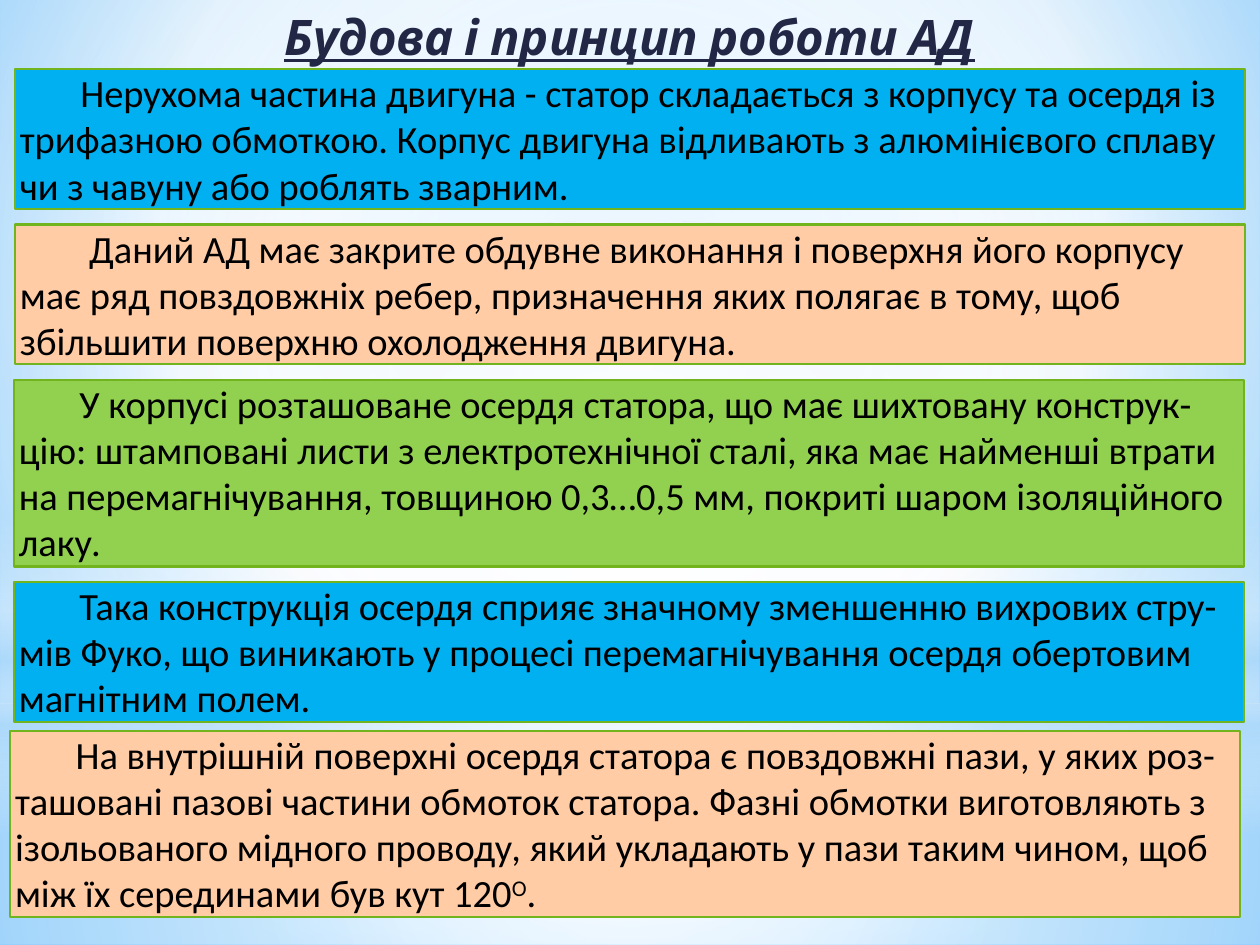
from dataclasses import dataclass

from lxml.etree import SubElement
from pptx import Presentation
from pptx.dml.color import RGBColor
from pptx.enum.shapes import MSO_SHAPE
from pptx.enum.text import MSO_ANCHOR, MSO_AUTO_SIZE, PP_ALIGN
from pptx.oxml.ns import qn
from pptx.util import Pt


@dataclass(frozen=True)
class Theme:
    title_font: str = "Cabin"
    body_font: str = "Calibri"
    title_size: int = 28
    body_size: int = 22
    title: str = "212745"
    body: str = "000000"
    border: str = "72B41D"
    blue: str = "00B0F0"
    peach: str = "FFCCA6"
    green: str = "92D050"
    white: str = "FFFFFF"
    haze: str = "B4DCFA"
    sky_centre: str = "9ED5FF"
    sky_edge: str = "5BB9FF"


THEME = Theme()
SLIDE_WIDTH, SLIDE_HEIGHT = 720, 540
PANEL_WIDTH, LINE_HEIGHT = 702.7, 26.65
FIRST_PANEL_TOP, PANEL_GAP, LAST_GAP = 39.6, 8.8, 5.15
CENTRE = (50, 50, 50, 50)


@dataclass(frozen=True)
class Panel:
    left: float
    lines: int
    fill: str
    indent: float
    text: str
    superscript: str = ""
    ending: str = ""
    gap: float = PANEL_GAP


PANELS = [
    Panel(8.6, 3, THEME.blue, 34.6,
          "Нерухома частина двигуна - статор складається з корпусу та осердя із "
          "трифазною обмоткою. Корпус двигуна відливають з алюмінієвого сплаву "
          "чи з чавуну або роблять зварним."),
    Panel(8.6, 3, THEME.peach, 39.6,
          "Даний АД має закрите обдувне виконання і поверхня його корпусу "
          "має ряд повздовжніх ребер, призначення яких полягає в тому, щоб "
          "збільшити поверхню охолодження двигуна."),
    Panel(8, 4, THEME.green, 34.6,
          "У корпусі розташоване осердя статора, що має шихтовану конструк-"
          "цію: штамповані листи з електротехнічної сталі, яка має найменші втрати "
          "на перемагнічування, товщиною 0,3…0,5 мм, покриті шаром ізоляційного "
          "лаку."),
    Panel(8, 3, THEME.blue, 34.6,
          "Така конструкція осердя сприяє значному зменшенню вихрових стру-"
          "мів Фуко, що виникають у процесі перемагнічування осердя обертовим "
          "магнітним полем.", gap=LAST_GAP),
    Panel(5.8, 4, THEME.peach, 34.6,
          "На внутрішній поверхні осердя статора є повздовжні пази, у яких роз-"
          "ташовані пазові частини обмоток статора. Фазні обмотки виготовляють з "
          "ізольованого мідного проводу, який укладають у пази таким чином, щоб "
          "між їх серединами був кут 120", "О", "."),
]


def set_gradient(owner, stops, focus=None):
    owner.fill.solid() if hasattr(owner, "fill") else owner.background.fill.solid()
    gradient = owner.element.find(".//" + qn("a:solidFill"))
    gradient.clear()
    gradient.tag = qn("a:gradFill")
    gradient.set("rotWithShape", "1")
    stop_list = SubElement(gradient, qn("a:gsLst"))
    for position, color, opacity in stops:
        stop = SubElement(stop_list, qn("a:gs"), pos=str(position * 1000))
        tint = SubElement(stop, qn("a:srgbClr"), val=color)
        if opacity < 100:
            SubElement(tint, qn("a:alpha"), val=str(opacity * 1000))
    if focus:
        circle = SubElement(gradient, qn("a:path"), path="circle")
        edges = {side: str(share * 1000) for side, share in zip("ltrb", focus)}
        SubElement(circle, qn("a:fillToRect"), edges)
    else:
        SubElement(gradient, qn("a:lin"), ang="5400000", scaled="0")


def add_glow(slide, top, height, stops, focus=CENTRE, outline=MSO_SHAPE.RECTANGLE):
    glow = slide.shapes.add_shape(outline, 0, Pt(top), Pt(SLIDE_WIDTH), Pt(height))
    glow.shadow.inherit = False
    glow.line.fill.background()
    set_gradient(glow, stops, focus)


def add_backdrop(slide):
    white, haze = THEME.white, THEME.haze
    set_gradient(slide, [(0, THEME.sky_centre, 100), (60, white, 100),
                         (100, THEME.sky_edge, 100)], (20, 10, 20, 60))
    add_glow(slide, 401.8, 138.2, [(0, white, 91), (37, white, 76), (100, haze, 79)])
    add_glow(slide, 0, 401.8, [(0, white, 89), (48, white, 62), (100, haze, 79)])
    add_glow(slide, 296.6, 180, [(0, white, 0), (29, white, 30), (45, haze, 40),
                                 (55, white, 26), (65, haze, 60), (100, white, 0)], None)
    add_glow(slide, 126, 401.8, [(0, white, 100), (56, white, 0)],
             outline=MSO_SHAPE.OVAL)


def set_frame(frame, side, edge):
    frame.word_wrap = True
    frame.auto_size = MSO_AUTO_SIZE.SHAPE_TO_FIT_TEXT
    frame.vertical_anchor = MSO_ANCHOR.TOP
    frame.margin_left = frame.margin_right = Pt(side)
    frame.margin_top = frame.margin_bottom = Pt(edge)


def add_run(paragraph, text, font_name, size, color):
    run = paragraph.add_run()
    run.text = text
    run.font.name = font_name
    run.font.size = Pt(size)
    run.font.color.rgb = RGBColor.from_string(color)
    return run


def add_title(slide, text):
    title = slide.shapes.add_textbox(Pt(8.6), 0, Pt(PANEL_WIDTH), Pt(41))
    set_frame(title.text_frame, 0, 3.6)
    paragraph = title.text_frame.paragraphs[0]
    paragraph.alignment = PP_ALIGN.CENTER
    font = add_run(paragraph, text, THEME.title_font, THEME.title_size, THEME.title).font
    font.bold = font.italic = font.underline = True


def add_panel(slide, panel, top):
    height = panel.lines * LINE_HEIGHT
    box = slide.shapes.add_shape(MSO_SHAPE.RECTANGLE, Pt(panel.left), Pt(top),
                                 Pt(PANEL_WIDTH), Pt(height))
    box.shadow.inherit = False
    box.fill.solid()
    box.fill.fore_color.rgb = RGBColor.from_string(panel.fill)
    box.line.color.rgb = RGBColor.from_string(THEME.border)
    box.line.width = Pt(1.25)
    set_frame(box.text_frame, 2.8, 0)
    paragraph = box.text_frame.paragraphs[0]
    paragraph.alignment = PP_ALIGN.LEFT
    paragraph._p.get_or_add_pPr().set("indent", str(Pt(panel.indent)))
    for text, baseline in ((panel.text, 0), (panel.superscript, 30000), (panel.ending, 0)):
        if text:
            run = add_run(paragraph, text, THEME.body_font, THEME.body_size, THEME.body)
            run.font._element.set("baseline", str(baseline))
    return top + height + panel.gap


def main():
    deck = Presentation()
    deck.slide_width, deck.slide_height = Pt(SLIDE_WIDTH), Pt(SLIDE_HEIGHT)
    slide = deck.slides.add_slide(deck.slide_layouts[6])
    add_backdrop(slide)
    add_title(slide, "Будова і принцип роботи АД")
    top = FIRST_PANEL_TOP
    for panel in PANELS:
        top = add_panel(slide, panel, top)
    deck.save("out.pptx")


if __name__ == "__main__":
    main()
